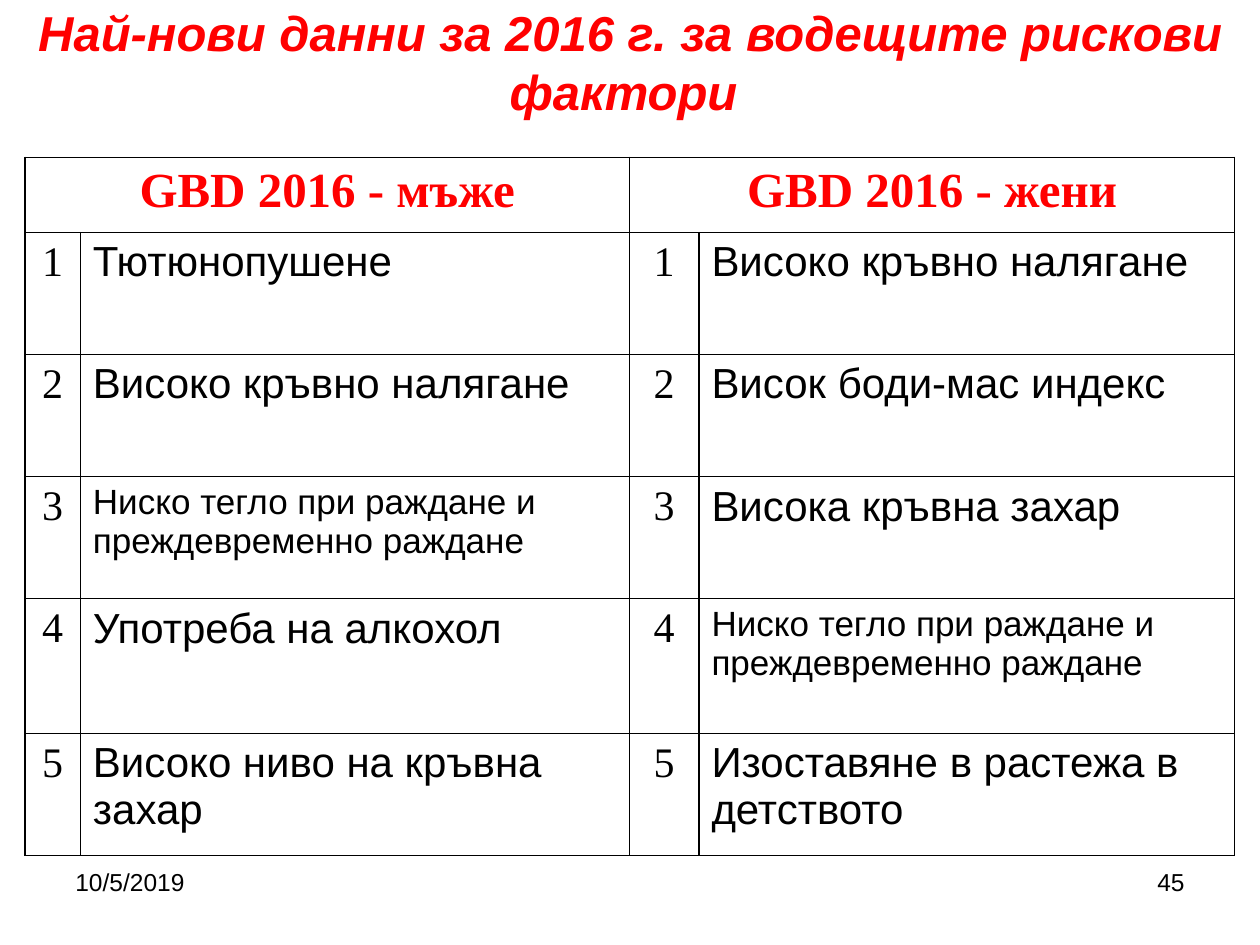
from dataclasses import dataclass

from lxml import etree
from pptx import Presentation
from pptx import util as u
from pptx.dml.color import RGBColor
from pptx.enum import text
from pptx.oxml import ns

Cm, Pt = u.Cm, u.Pt
ALIGN = text.PP_ALIGN


@dataclass(frozen=True)
class Theme:
    accent: str = "FF0000"
    ink: str = "000000"
    sans: str = "Arial"
    serif: str = "Times New Roman"
    heading: int = 28
    body: int = 24
    compact: int = 20
    footer: int = 14
    border: int = 1


T = Theme()

TITLE = "Най-нови данни за 2016 г. за водещите рискови фактори "
HEADERS = ["GBD 2016 - мъже", "GBD 2016 - жени"]
LOW_WEIGHT = "Ниско тегло при раждане и преждевременно раждане"
FACTORS = [
    ("Тютюнопушене", "Високо кръвно налягане"),
    ("Високо кръвно налягане", "Висок боди-мас индекс"),
    (LOW_WEIGHT, "Висока кръвна захар"),
    ("Употреба на алкохол", LOW_WEIGHT),
    ("Високо ниво на кръвна захар", "Изоставяне в растежа в детството"),
]
COLUMNS = [1.12, 11.07, 1.4, 10.8]
ROWS = [1.52, 2.46, 2.46, 2.46, 2.72, 2.46]


def write(tf, content, size=T.body, font=T.sans, color=T.ink,
          bold=False, italic=False, align=ALIGN.LEFT):
    """Put one formatted run in the first paragraph."""
    p = tf.paragraphs[0]
    p.alignment = align
    r = p.add_run()
    r.text = content
    f = r.font
    f.size, f.name, f.bold, f.italic = Pt(size), font, bold, italic
    f.color.rgb = RGBColor.from_string(color)


def set_borders(cell):
    """Draw a solid line on all four sides of a cell."""
    tc_pr = cell._tc.get_or_add_tcPr()
    for side in ("lnL", "lnR", "lnT", "lnB"):
        ln = etree.SubElement(tc_pr, ns.qn(f"a:{side}"), w=str(Pt(T.border)))
        fill = etree.SubElement(ln, ns.qn("a:solidFill"))
        etree.SubElement(fill, ns.qn("a:srgbClr"), val=T.ink)


def add_title(s):
    sp = s.shapes.title
    sp.left, sp.top, sp.width, sp.height = Cm(0.5), Cm(-0.08), Cm(24.41), Cm(2.64)
    tf = sp.text_frame
    tf.word_wrap = True
    tf.auto_size = text.MSO_AUTO_SIZE.SHAPE_TO_FIT_TEXT
    tf.vertical_anchor = text.MSO_ANCHOR.MIDDLE
    write(tf, TITLE, size=T.heading, color=T.accent, bold=True, italic=True,
          align=ALIGN.CENTER)


def add_risk_table(s):
    frame = s.shapes.add_table(len(ROWS), len(COLUMNS), Cm(0.5), Cm(3.17),
                               Cm(sum(COLUMNS)), Cm(sum(ROWS)))
    table = frame.table
    table.first_row = table.horz_banding = False
    for column, width in zip(table.columns, COLUMNS):
        column.width = Cm(width)
    for row, height in zip(table.rows, ROWS):
        row.height = Cm(height)
    for cell in table.iter_cells():
        set_borders(cell)
        cell.fill.background()

    # Each group takes a rank column and a factor column
    for group, header in enumerate(HEADERS):
        col = 2 * group
        top = table.cell(0, col)
        top.merge(table.cell(0, col + 1))
        write(top.text_frame, header, size=T.heading, font=T.serif,
              color=T.accent, bold=True, align=ALIGN.CENTER)
        for rank, factors in enumerate(FACTORS, start=1):
            factor = factors[group]
            write(table.cell(rank, col).text_frame, str(rank), font=T.serif,
                  align=ALIGN.CENTER)
            write(table.cell(rank, col + 1).text_frame, factor,
                  size=T.compact if factor == LOW_WEIGHT else T.body)


def add_footer(s, content, left, align):
    sp = s.shapes.add_textbox(Cm(left), Cm(17.35), Cm(5.92), Cm(1.32))
    sp.text_frame.word_wrap = True
    write(sp.text_frame, content, size=T.footer, align=align)


def main():
    prs = Presentation()
    prs.slide_width, prs.slide_height = Cm(25.4), Cm(19.05)
    s = prs.slides.add_slide(prs.slide_layouts[5])  # Title Only

    # Heading and ranking
    add_title(s)
    add_risk_table(s)

    # Date and page number
    add_footer(s, "10/5/2019", 1.27, ALIGN.LEFT)
    add_footer(s, "45", 18.21, ALIGN.RIGHT)

    prs.save("out.pptx")


if __name__ == "__main__":
    main()
